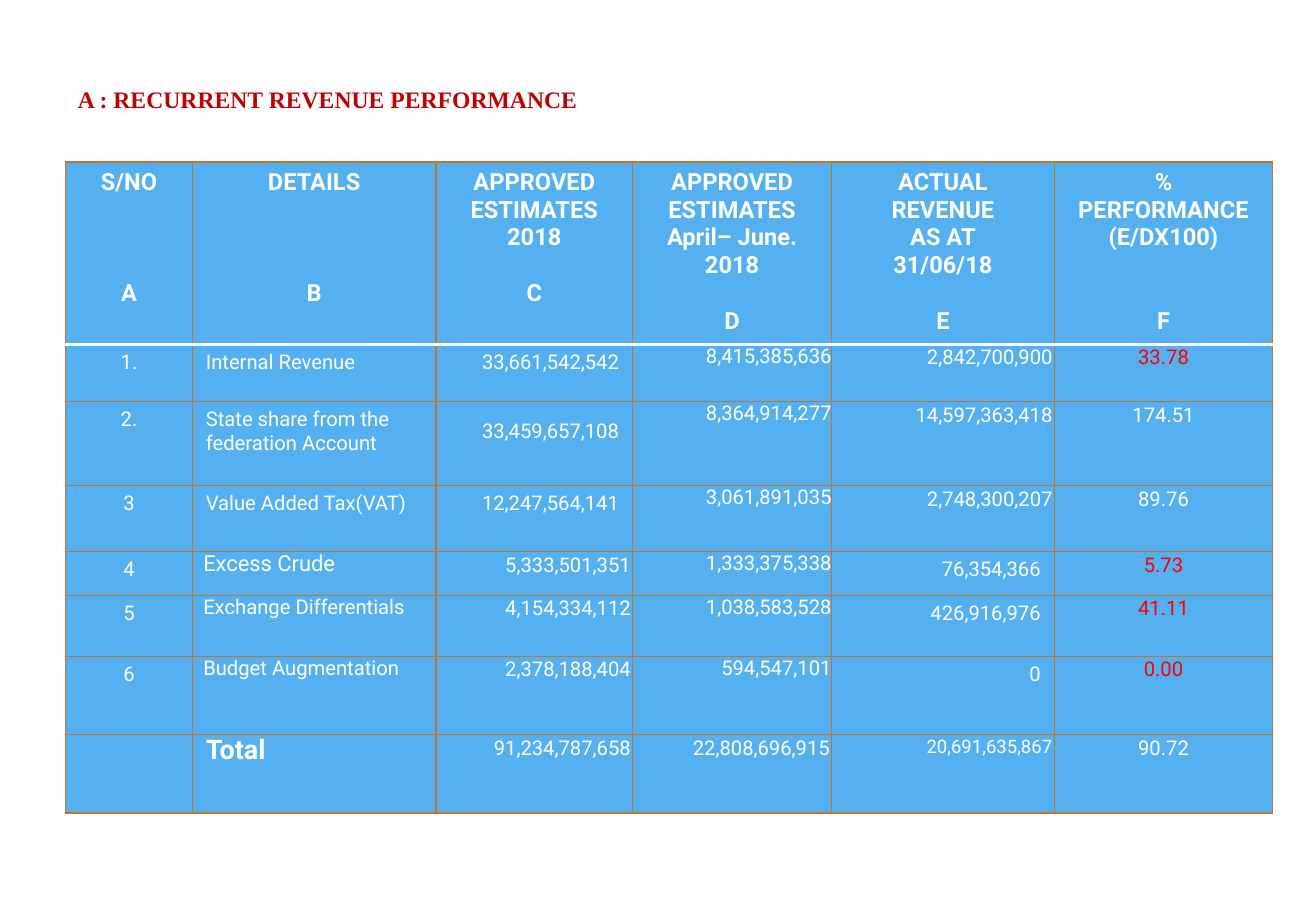
from pptx import Presentation
from pptx.dml.color import RGBColor
from pptx.enum.text import MSO_ANCHOR, PP_ALIGN
from pptx.oxml import parse_xml
from pptx.oxml.ns import nsdecls
from pptx.util import Pt

BLUE = RGBColor(0x54, 0xB0, 0xF0)
BROWN = RGBColor(0xC1, 0x75, 0x29)
WHITE = RGBColor(0xFF, 0xFF, 0xFF)
RED = RGBColor(0xFF, 0x00, 0x00)
DARK_RED = RGBColor(0xC0, 0x00, 0x00)

LEFT, CENTER, RIGHT = PP_ALIGN.LEFT, PP_ALIGN.CENTER, PP_ALIGN.RIGHT
HEADER_LINE = 16.4

# Cell margins: left, top, right, bottom
WIDE = (8, 3.6, 8, 3.6)
TIGHT = (1, 1, 1, 0)
NONE = (0, 0, 0, 0)

COL_WIDTHS = [75, 144.5, 116.5, 118, 132, 129.5]
ROW_HEIGHTS = [108, 34, 50, 39, 26, 36, 46.5, 46.5]

# Heading lines, column letter, free lines above the letter
HEADERS = [
    (["S/NO"], "A", 3),
    (["DETAILS"], "B", 3),
    (["APPROVED ESTIMATES 2018"], "C", 1),
    (["APPROVED ESTIMATES April– June. 2018"], "D", 1),
    (["ACTUAL REVENUE", "AS AT", "31/06/18"], "E", 1),
    (["% PERFORMANCE (E/DX100)"], "F", 2),
]
ROWS = [
    ["1.", "Internal Revenue", "33,661,542,542", "8,415,385,636", "2,842,700,900", "33.78"],
    ["2.", "State share from the federation Account", "33,459,657,108",
     "8,364,914,277", "14,597,363,418", "174.51"],
    ["3", "Value Added Tax(VAT)", "12,247,564,141", "3,061,891,035", "2,748,300,207", "89.76"],
    ["4", "Excess Crude", "5,333,501,351", "1,333,375,338", "76,354,366", "5.73"],
    ["5", "Exchange Differentials", "4,154,334,112", "1,038,583,528", "426,916,976", "41.11"],
    ["6", "Budget Augmentation", "2,378,188,404", "594,547,101", "0", "0.00"],
    ["", "Total", "91,234,787,658", "22,808,696,915", "20,691,635,867", "90.72"],
]
ALIGNS = [CENTER, LEFT, RIGHT, RIGHT, RIGHT, CENTER]
UPPER_MARGINS = [WIDE, WIDE, WIDE, NONE, TIGHT, TIGHT]
LOWER_MARGINS = [WIDE, (6.5, 0, 0, 0), TIGHT, NONE, WIDE, TIGHT]
TOTAL_MARGINS = [WIDE, (8, 0, 0, 0), TIGHT, TIGHT, TIGHT, TIGHT]
MARGINS = [[WIDE] * 6] + [UPPER_MARGINS] * 3 + [LOWER_MARGINS] * 3 + [TOTAL_MARGINS]
RED_VALUES = {"33.78", "5.73", "41.11", "0.00"}
SPECIAL = {
    "Excess Crude": {"size": 13},
    "33,459,657,108": {"spacing": 1.5},
    "Total": {"size": 16, "bold": True},
    "20,691,635,867": {"size": 11},
}


def write(p, text, size=12, color=WHITE, bold=False, font="Roboto",
          align=LEFT, before=0, spacing=1.0):
    p.alignment = align
    p.space_before = Pt(before)
    p.line_spacing = spacing
    r = p.add_run()
    r.text = text
    r.font.name = font
    r.font.size = Pt(size)
    r.font.bold = bold
    r.font.color.rgb = color


def format_cell(cell, row, margins):
    """Set margins, borders and fill; the line under the header is white."""
    cell.margin_left, cell.margin_top, cell.margin_right, cell.margin_bottom = map(Pt, margins)
    tc_pr = cell._tc.get_or_add_tcPr()
    for side in "LRTB":
        white = (row, side) in [(0, "B"), (1, "T")]
        color, width = (WHITE, 2) if white else (BROWN, 0.79)
        tc_pr.append(parse_xml(
            f'<a:ln{side} {nsdecls("a")} w="{Pt(width)}"><a:solidFill>'
            f'<a:srgbClr val="{color}"/></a:solidFill></a:ln{side}>'))
    cell.fill.solid()
    cell.fill.fore_color.rgb = BLUE


prs = Presentation()
prs.slide_width, prs.slide_height = Pt(780), Pt(540)
slide = prs.slides.add_slide(prs.slide_layouts[5])

title = slide.shapes.title
title.left, title.top, title.width, title.height = Pt(39), Pt(27), Pt(715), Pt(63)
title.text_frame.vertical_anchor = MSO_ANCHOR.MIDDLE
write(title.text_frame.paragraphs[0], "A : RECURRENT REVENUE PERFORMANCE",
      size=14, color=DARK_RED, bold=True, font="Times New Roman")

table = slide.shapes.add_table(
    len(ROW_HEIGHTS), len(COL_WIDTHS), Pt(39), Pt(96),
    Pt(sum(COL_WIDTHS)), Pt(sum(ROW_HEIGHTS))).table
table.horz_banding = False
for col, width in zip(table.columns, COL_WIDTHS):
    col.width = Pt(width)
for row, height in zip(table.rows, ROW_HEIGHTS):
    row.height = Pt(height)

for i, row_margins in enumerate(MARGINS):
    for j, margins in enumerate(row_margins):
        format_cell(table.cell(i, j), i, margins)

for j, (lines, letter, free_lines) in enumerate(HEADERS):
    tf = table.cell(0, j).text_frame
    for n, line in enumerate(lines):
        p = tf.add_paragraph() if n else tf.paragraphs[0]
        write(p, line, size=14, bold=True, align=CENTER)
    write(tf.add_paragraph(), letter, size=14, bold=True, align=CENTER,
          before=free_lines * HEADER_LINE)

for i, values in enumerate(ROWS, start=1):
    for j, value in enumerate(values):
        if value:
            write(table.cell(i, j).text_frame.paragraphs[0], value, align=ALIGNS[j],
                  color=RED if value in RED_VALUES else WHITE, **SPECIAL.get(value, {}))

prs.save("out.pptx")
